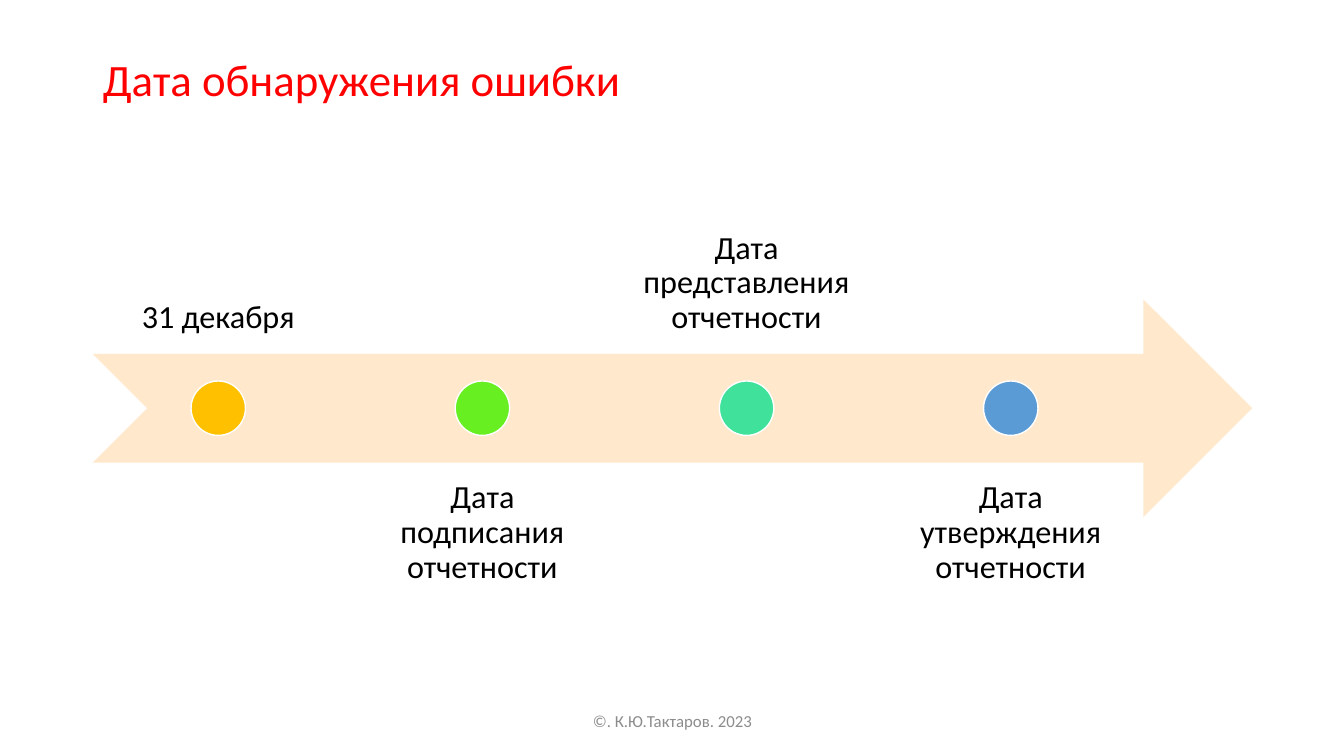
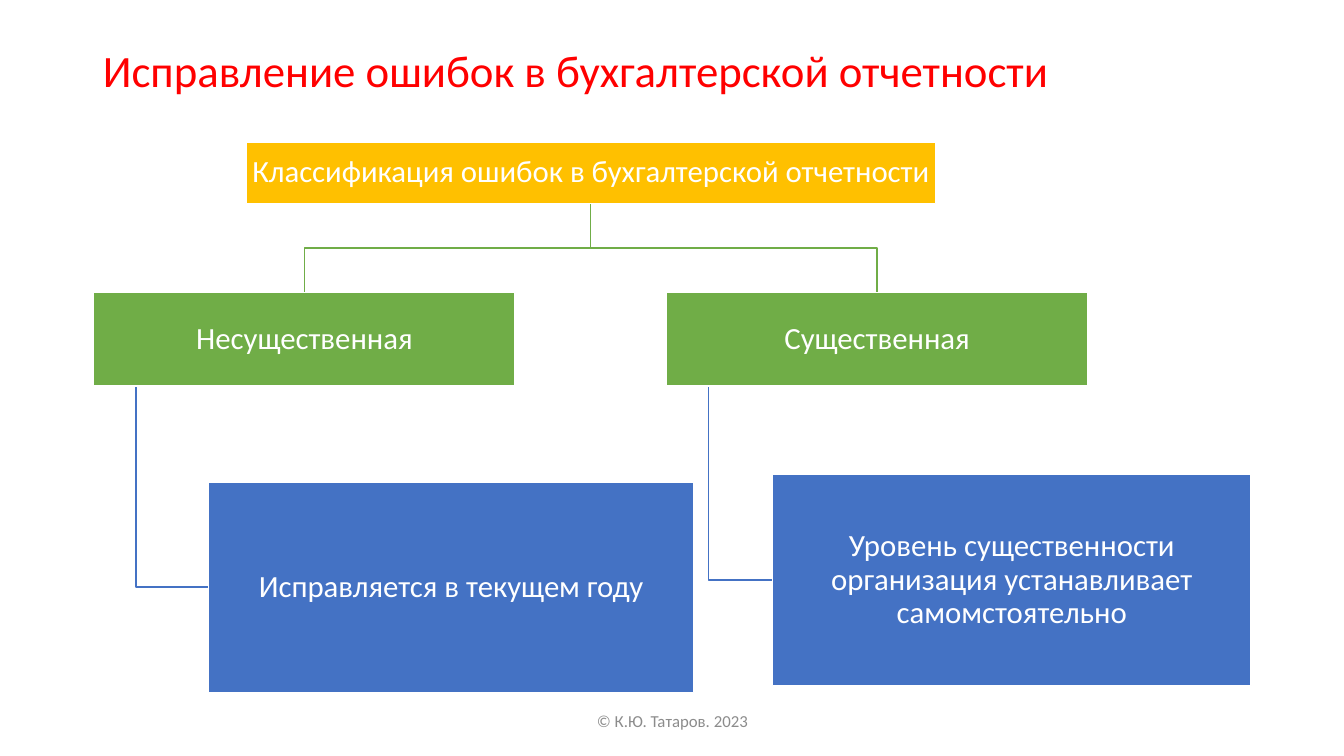
from pptx import Presentation
from pptx import util as u
from pptx.dml.color import RGBColor
from pptx.enum import shapes, text

FONT = "Calibri"
COLORS = {
    "title": "FF0000",
    "text": "000000",
    "footer": "8C8C8C",
    "white": "FFFFFF",
    "band": "FFE8CC",
    "gold": "FFC000",
    "lime": "67EF21",
    "mint": "3FE19B",
    "sky": "5B9BD5",
    "green": "70AD47",
    "blue": "4472C4",
}
CENTER = text.PP_ALIGN.CENTER
TOP, MIDDLE, BOTTOM = (
    text.MSO_ANCHOR.TOP, text.MSO_ANCHOR.MIDDLE, text.MSO_ANCHOR.BOTTOM)
LEFT_EDGE, CONTENT_WIDTH = 0.92, 11.5


def rgb(name):
    return RGBColor.from_string(COLORS[name])


def write(shape, words, size, color, align=CENTER, anchor=MIDDLE,
          inset=(0.1, 0.05), spacing=0.9):
    """Fill a shape with one paragraph; inset is (sides, top and bottom)."""
    frame = shape.text_frame
    frame.word_wrap = True
    frame.auto_size = text.MSO_AUTO_SIZE.NONE
    frame.vertical_anchor = anchor
    frame.margin_left = frame.margin_right = u.Inches(inset[0])
    frame.margin_top = frame.margin_bottom = u.Inches(inset[1])
    para = frame.paragraphs[0]
    para.alignment = align
    para.line_spacing = spacing
    span = para.add_run()
    span.text = words
    span.font.name = FONT
    span.font.size = u.Pt(size)
    span.font.color.rgb = rgb(color)


class SlideBuilder:
    def __init__(self, deck):
        self.deck = deck
        self.slide = None

    def start(self, title, title_height, footer):
        self.slide = self.deck.slides.add_slide(self.deck.slide_layouts[5])
        heading = self.slide.shapes.title
        heading.left, heading.top = u.Inches(LEFT_EDGE), u.Inches(0.4)
        heading.width = u.Inches(CONTENT_WIDTH)
        heading.height = u.Inches(title_height)
        write(heading, title, 32, "title", align=text.PP_ALIGN.LEFT)
        self.label(footer, (4.42, 6.95, 4.5, 0.4), size=12, color="footer",
                   spacing=1.0)

    def label(self, words, area, size, color, **style):
        box = self.slide.shapes.add_textbox(*map(u.Inches, area))
        write(box, words, size, color, **style)

    def shape(self, kind, area, fill, line=None):
        shape = self.slide.shapes.add_shape(kind, *map(u.Inches, area))
        shape.shadow.inherit = False
        shape.fill.solid()
        shape.fill.fore_color.rgb = rgb(fill)
        if line:
            shape.line.color.rgb = rgb(line)
            shape.line.width = u.Pt(1)
        else:
            shape.line.fill.background()
        return shape

    def node(self, words, area, fill):
        box = self.shape(shapes.MSO_SHAPE.RECTANGLE, area, fill, line="white")
        write(box, words, 22, "white", inset=(0.02, 0.02))

    def branch(self, points, color):
        """Draw an open line through the given points."""
        start, *rest = [(u.Inches(x), u.Inches(y)) for x, y in points]
        builder = self.slide.shapes.build_freeform(*start)
        builder.add_line_segments(rest, close=False)
        line = builder.convert_to_shape()
        line.shadow.inherit = False
        line.fill.background()
        line.line.color.rgb = rgb(color)
        line.line.width = u.Pt(1)


def timeline(page):
    page.start("Дата обнаружения ошибки", 0.82, "©. К.Ю.Тактаров. 2023")
    band_top, band_height = 2.97, 2.16
    page.shape(shapes.MSO_SHAPE.NOTCHED_RIGHT_ARROW,
               (LEFT_EDGE, band_top, CONTENT_WIDTH, band_height), "band")
    milestones = [
        ("31 декабря", "gold"),
        ("Дата подписания отчетности", "lime"),
        ("Дата представления отчетности", "mint"),
        ("Дата утверждения отчетности", "sky"),
    ]
    label_width, pitch, dot = 2.49, 2.62, 0.54
    dot_top = band_top + (band_height - dot) / 2
    for index, (words, color) in enumerate(milestones):
        left = LEFT_EDGE + index * pitch
        above = index % 2 == 0
        page.label(words, (left, 1.35 if above else 4.59, label_width, 2.16),
                   size=23, color="text", inset=(0.18, 0.18),
                   anchor=BOTTOM if above else TOP)
        page.shape(shapes.MSO_SHAPE.OVAL,
                   (left + (label_width - dot) / 2, dot_top, dot, dot),
                   color, line="white")


def classification(page):
    page.start("Исправление ошибок в бухгалтерской отчетности", 0.64,
               "© К.Ю. Татаров. 2023")
    root = (2.44, 1.41, 6.84, 0.61)
    root_center, root_bottom = root[0] + root[2] / 2, root[1] + root[3]
    kind_top, kind_width, kind_height = 2.9, 4.18, 0.93
    kind_bottom = kind_top + kind_height
    fork = (root_bottom + kind_top) / 2
    kinds = [
        ("Несущественная", 0.93,
         "Исправляется в текущем году", (2.07, 4.78, 4.81, 2.09)),
        ("Существенная", 6.61,
         "Уровень существенности организация устанавливает самомстоятельно",
         (7.66, 4.71, 4.75, 2.09)),
    ]
    for kind, left, detail, area in kinds:
        center, stem = left + kind_width / 2, left + kind_width / 10
        detail_middle = area[1] + area[3] / 2
        page.branch([(root_center, root_bottom), (root_center, fork),
                     (center, fork), (center, kind_top)], "green")
        page.branch([(stem, kind_bottom), (stem, detail_middle),
                     (area[0], detail_middle)], "blue")
        page.node(kind, (left, kind_top, kind_width, kind_height), "green")
        page.node(detail, area, "blue")
    page.node("Классификация ошибок в бухгалтерской отчетности", root, "gold")


def main():
    deck = Presentation()
    deck.slide_width, deck.slide_height = u.Inches(13.33), u.Inches(7.5)
    page = SlideBuilder(deck)
    timeline(page)
    classification(page)
    deck.save("out.pptx")


if __name__ == "__main__":
    main()
